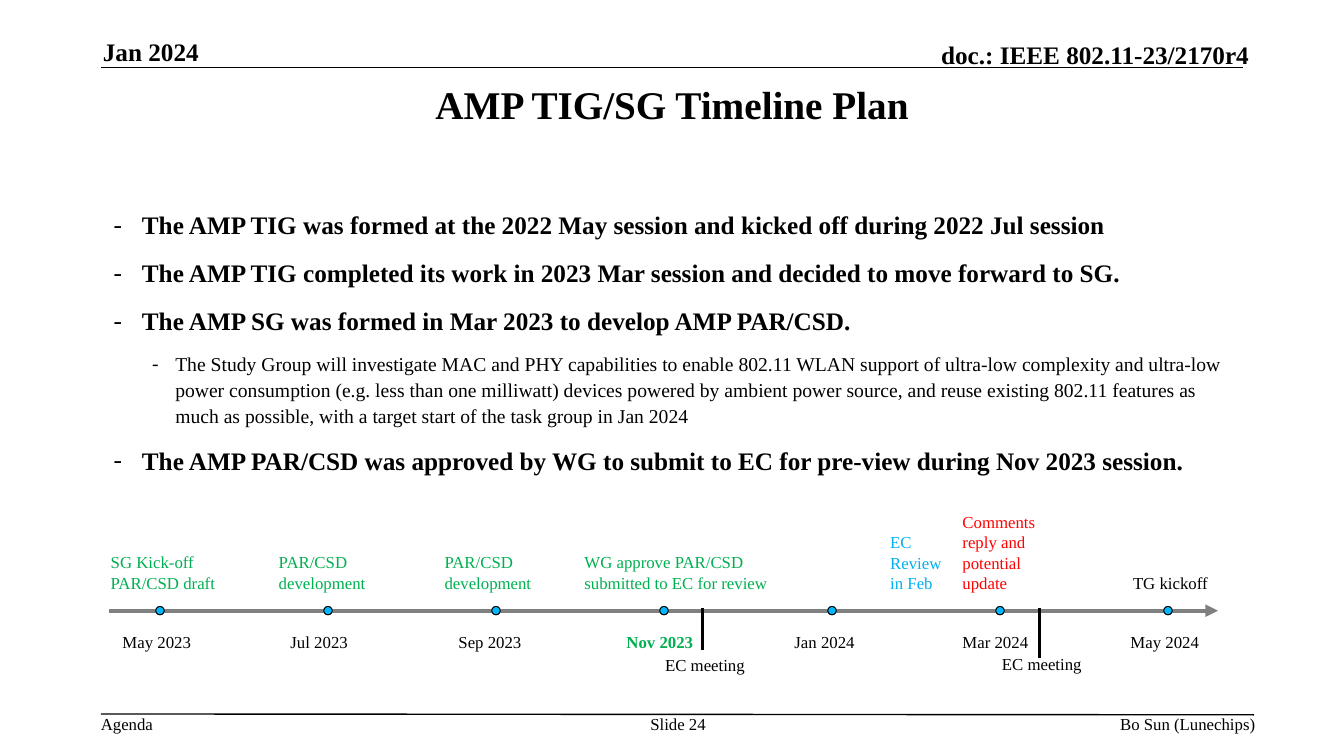
"""Build the AMP TIG/SG timeline slide on a grid of 160 columns and 90 rows."""
from lxml import etree
from pptx import Presentation
from pptx import util as u
from pptx.dml.color import RGBColor
from pptx.enum import shapes, text
from pptx.oxml import ns

COLUMNS, ROWS = 160, 90
SLIDE_WIDTH, SLIDE_HEIGHT = u.Inches(13.33), u.Inches(7.5)
FONT = "Times New Roman"
BLACK, GREEN, RED, BLUE = "000000", "00B050", "FF0000", "00B0F0"
GREY, DOT_FILL = "808080", "00B8FF"
LEFT, CENTER, RIGHT = text.PP_ALIGN.LEFT, text.PP_ALIGN.CENTER, text.PP_ALIGN.RIGHT
TOP, BOTTOM = text.MSO_ANCHOR.TOP, text.MSO_ANCHOR.BOTTOM

AXIS_ROW, DATE_ROW, STEP = 72.7, 74.65, 20
FIRST_DOT, FIRST_DATE, DOT_SIZE = 19.05, 13.4, 1
DATES = ["May 2023", "Jul 2023", "Sep 2023", "Nov 2023",
         "Jan 2024", "Mar 2024", "May 2024"]
CURRENT_DATE = "Nov 2023"
MILESTONES = [
    (12, 65.15, 17.3, 6, ["SG Kick-off", "PAR/CSD draft"], GREEN),
    (32, 65.15, 13, 6, ["PAR/CSD development"], GREEN),
    (51.75, 65.15, 14.3, 6, ["PAR/CSD development"], GREEN),
    (68.4, 65.15, 24.8, 6, ["WG approve PAR/CSD submitted to EC for review"], GREEN),
    (104.8, 62.75, 9.6, 8.5, ["EC Review in Feb"], BLUE),
    (113.4, 60.35, 15, 10.9, ["Comments reply and potential update"], RED),
    (133.7, 67.55, 13, 3.6, ["TG kickoff"], BLACK),
]
MEETINGS = [(83.65, 77.4, 77.4), (123.75, 78.35, 77.2)]
BODY = [
    (0, "The AMP TIG was formed at the 2022 May session and kicked off during "
        "2022 Jul session"),
    (0, "The AMP TIG completed its work in 2023 Mar session and decided to move "
        "forward to SG."),
    (0, "The AMP SG was formed in Mar 2023 to develop AMP PAR/CSD."),
    (1, "The Study Group will investigate MAC and PHY capabilities to enable 802.11 "
        "WLAN support of ultra-low complexity and ultra-low power consumption (e.g. "
        "less than one milliwatt) devices powered by ambient power source, and reuse "
        "existing 802.11 features as much as possible, with a target start of the "
        "task group in Jan 2024"),
    (0, "The AMP PAR/CSD was approved by WG to submit to EC for pre-view during "
        "Nov 2023 session."),
]
LEVELS = [
    {"size": 18, "bold": True, "before": 4.5, "margin": 0.31, "indent": -0.28},
    {"size": 14, "bold": False, "before": 3.8, "margin": 0.64, "indent": -0.23},
]


def color(value):
    """Turn a hex string into a colour."""
    return RGBColor.from_string(value)


def across(columns):
    """Give the length of a number of columns."""
    return u.Emu(round(SLIDE_WIDTH * columns / COLUMNS))


def down(rows):
    """Give the length of a number of rows."""
    return u.Emu(round(SLIDE_HEIGHT * rows / ROWS))


def apply(target, formats):
    """Set each attribute named in a dict of format values."""
    for name, value in formats.items():
        setattr(target, name, value)


def add_frame(slide, place, anchor=TOP, inset=True):
    """Add an empty wrapping text box and return its text frame."""
    left, top, width, height = place
    box = slide.shapes.add_textbox(across(left), down(top), across(width), down(height))
    frame = box.text_frame
    apply(frame, {"word_wrap": True, "vertical_anchor": anchor})
    if not inset:
        apply(frame, dict.fromkeys(
            ["margin_left", "margin_top", "margin_right", "margin_bottom"], 0))
    return frame


def write(paragraph, words, size=12, fill=BLACK, bold=False):
    """Add one formatted run to a paragraph."""
    run = paragraph.add_run()
    run.text = words
    apply(run.font, {"name": FONT, "size": u.Pt(size), "bold": bold})
    run.font.color.rgb = color(fill)


def add_text(slide, place, lines, align=LEFT, anchor=TOP, inset=True, **formats):
    """Add a text box with one paragraph for each line."""
    frame = add_frame(slide, place, anchor, inset)
    for index, line in enumerate(lines):
        paragraph = frame.add_paragraph() if index else frame.paragraphs[0]
        paragraph.alignment = align
        write(paragraph, line, **formats)


def add_line(slide, start, end, width=1, fill=BLACK, arrow=False):
    """Add a straight line, with an arrowhead at its end if asked."""
    connector = slide.shapes.add_connector(
        shapes.MSO_CONNECTOR.STRAIGHT,
        across(start[0]), down(start[1]), across(end[0]), down(end[1]))
    connector.line.width = u.Pt(width)
    connector.line.color.rgb = color(fill)
    if arrow:
        outline = connector.line._get_or_add_ln()
        etree.SubElement(outline, ns.qn("a:tailEnd"), type="triangle")
    etree.SubElement(connector._element.spPr, ns.qn("a:effectLst"))


def add_dot(slide, column):
    """Add a round marker centred on the timeline."""
    size = across(DOT_SIZE)
    dot = slide.shapes.add_shape(
        shapes.MSO_SHAPE.OVAL, across(column) - size // 2,
        down(AXIS_ROW) - size // 2, size, size)
    dot.shadow.inherit = False
    dot.fill.solid()
    dot.fill.fore_color.rgb = color(DOT_FILL)
    dot.line.color.rgb = color(BLACK)
    dot.line.width = u.Pt(0.75)


def add_bullets(slide, place, items):
    """Add a text box of dashed paragraphs on two levels."""
    frame = add_frame(slide, place)
    for index, (level, words) in enumerate(items):
        style = LEVELS[level]
        paragraph = frame.add_paragraph() if index else frame.paragraphs[0]
        apply(paragraph, {"level": level, "line_spacing": 1.1,
                          "space_before": u.Pt(style["before"]),
                          "space_after": u.Pt(6)})
        properties = paragraph._p.get_or_add_pPr()
        properties.set("marL", str(u.Inches(style["margin"])))
        properties.set("indent", str(u.Inches(style["indent"])))
        etree.SubElement(properties, ns.qn("a:buFont"), typeface=FONT)
        etree.SubElement(properties, ns.qn("a:buChar"), char="-")
        write(paragraph, words, style["size"], bold=style["bold"])


def add_header_and_footer(slide):
    """Add the rules and the small texts at the top and bottom."""
    add_line(slide, (12, 8.05), (148, 8.05))
    add_line(slide, (12, 85), (149.3, 85.1))
    heading = {"anchor": BOTTOM, "inset": False, "size": 18, "bold": True}
    add_text(slide, (12.25, 4.3, 32.8, 3.6), ["Jan 2024"], **heading)
    add_text(slide, (87.5, 4.7, 61.2, 3.6), ["doc.: IEEE 802.11-23/2170r4"],
             align=RIGHT, **heading)
    for left, width, words, align in [
            (12, 12, "Agenda", LEFT), (76.1, 9.25, "Slide 24", CENTER),
            (93.75, 55.7, "Bo Sun (Lunechips)", RIGHT)]:
        add_text(slide, (left, 85, width, 2.4), [words], align=align, inset=False)


def add_timeline(slide):
    """Add the axis with its dates, milestones and meetings."""
    add_line(slide, (13, AXIS_ROW), (145, AXIS_ROW), 3, GREY, arrow=True)
    for index, date in enumerate(DATES):
        current = date == CURRENT_DATE
        add_dot(slide, FIRST_DOT + index * STEP)
        add_text(slide, (FIRST_DATE + index * STEP, DATE_ROW, 13, 3.6), [date],
                 fill=GREEN if current else BLACK, bold=current)
    for *place, lines, fill in MILESTONES:
        add_text(slide, place, lines, fill=fill)
    for column, end_row, label_row in MEETINGS:
        add_line(slide, (column, 72.4), (column, end_row), 2.25)
        add_text(slide, (column - 5.65, label_row, 14.3, 3.6), ["EC meeting"])


def main():
    """Build and save the presentation."""
    presentation = Presentation()
    apply(presentation, {"slide_width": SLIDE_WIDTH, "slide_height": SLIDE_HEIGHT})
    slide = presentation.slides.add_slide(presentation.slide_layouts[6])
    add_header_and_footer(slide)
    add_text(slide, (12, 9, 136, 13.9), ["AMP TIG/SG Timeline Plan"],
             align=CENTER, size=28, bold=True)
    add_bullets(slide, (12, 24, 136, 35.5), BODY)
    add_timeline(slide)
    presentation.save("out.pptx")


if __name__ == "__main__":
    main()
